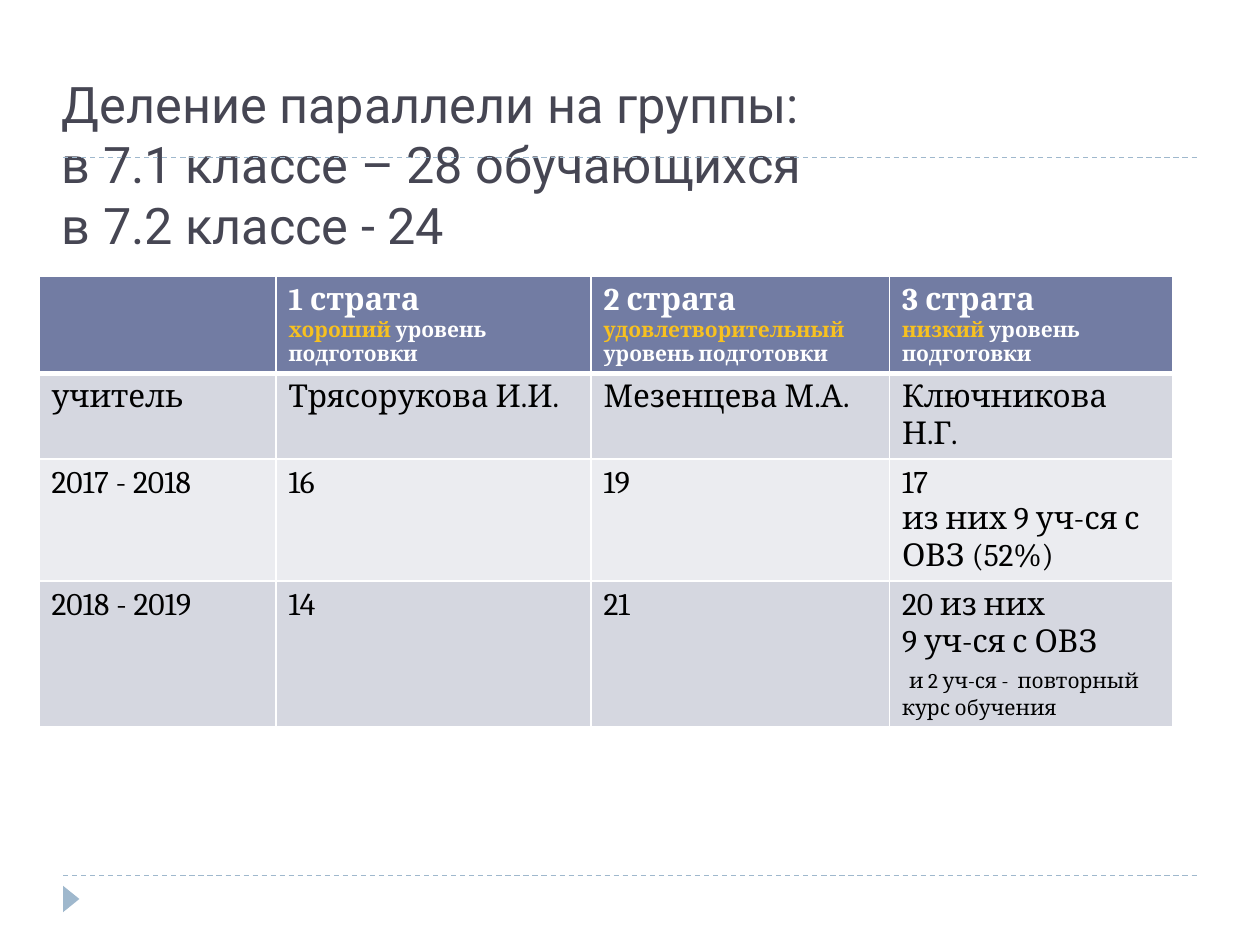
from lxml.etree import SubElement
from pptx import Presentation
from pptx.dml.color import RGBColor
from pptx.enum.dml import MSO_LINE
from pptx.enum.shapes import MSO_CONNECTOR, MSO_SHAPE
from pptx.enum.text import MSO_ANCHOR, PP_ALIGN
from pptx.oxml.ns import qn
from pptx.util import Inches, Pt

WIDTH, HEIGHT = 10, 7.5
COLOURS = {
    "title": "464653", "accent": "9FB8CD", "header": "727CA3",
    "dark band": "D5D7E0", "light band": "EBECF0",
    "white": "FFFFFF", "black": "000000", "yellow": "F7C120",
}
TITLE = "Деление параллели на группы:\nв 7.1 классе – 28 обучающихся\nв 7.2 классе - 24"
LEVELS = ["хороший ", "удовлетворительный ", "низкий "]
# A cell is a list of paragraphs, a paragraph a list of (text, size, colour).
BODY = [
    [["учитель"], ["Трясорукова И.И."], ["Мезенцева М.А."], ["Ключникова Н.Г."]],
    [["2017 - 2018"], ["16"], ["19"], ["17", "из них 9 уч-ся с ОВЗ (52%)"]],
    [["2018 - 2019"], ["14"], ["21"], ["20 из них", "9 уч-ся с ОВЗ"]],
]
REPEATERS = [(" ", 18, "black"), ("и 2 уч-ся -  повторный курс обучения", 12, "black")]


def colour(name):
    return RGBColor.from_string(COLOURS[name])


def header_cells():
    cells = [[]]
    for number, level in enumerate(LEVELS, 1):
        cells.append([
            [(f"{number} страта", 18, "white")],
            [(level, 12, "yellow"), ("уровень подготовки", 12, "white")],
        ])
    return cells


def body_cells():
    rows = [[[[(line, 18, "black")] for line in cell] for cell in row] for row in BODY]
    rows[-1][-1].append(REPEATERS)
    return rows


class SlideBuilder:
    """Holds the fonts and the current slide; places are shares of the slide."""

    title_font, table_font = "Roboto", "Cambria"

    def __init__(self, deck):
        self.deck = deck
        self.page = deck.slides.add_slide(deck.slide_layouts[5])

    def across(self, share):
        return int(self.deck.slide_width * share)

    def down(self, share):
        return int(self.deck.slide_height * share)

    def frame(self, left, top, width, height):
        return self.across(left), self.down(top), self.across(width), self.down(height)

    def format_run(self, span, font, size, ink, bold=False):
        span.font.name, span.font.size, span.font.bold = font, Pt(size), bold
        span.font.color.rgb = colour(ink)

    def title(self, text, *place):
        box = self.page.shapes.title
        box.left, box.top, box.width, box.height = self.frame(*place)
        box.text_frame.vertical_anchor = MSO_ANCHOR.BOTTOM
        para = box.text_frame.paragraphs[0]
        para.text, para.alignment = text, PP_ALIGN.LEFT
        for span in para.runs:
            self.format_run(span, self.title_font, 28.8, "title")

    def dashed_rule(self, left, right, top):
        rule = self.page.shapes.add_connector(
            MSO_CONNECTOR.STRAIGHT, self.across(left), self.down(top),
            self.across(right), self.down(top))
        rule.line.color.rgb = colour("accent")
        rule.line.width, rule.line.dash_style = Pt(0.75), MSO_LINE.DASH
        SubElement(rule._element.spPr, qn("a:effectLst"))

    def pointer(self, *place):
        shape = self.page.shapes.add_shape(MSO_SHAPE.ISOSCELES_TRIANGLE, *self.frame(*place))
        shape.rotation = 90
        shape.shadow.inherit = False
        shape.fill.solid()
        shape.fill.fore_color.rgb = colour("accent")
        shape.line.fill.background()

    def borders(self, cell, bottom):
        properties = cell._tc.get_or_add_tcPr()
        for side, width in (("L", 1), ("R", 1), ("T", 1), ("B", bottom)):
            edge = SubElement(properties, qn(f"a:ln{side}"), w=str(Pt(width)))
            fill = SubElement(edge, qn("a:solidFill"))
            SubElement(fill, qn("a:srgbClr"), val=COLOURS["white"])

    def cell(self, cell, paragraphs, band, header):
        self.borders(cell, 3 if header else 1)
        cell.fill.solid()
        cell.fill.fore_color.rgb = colour(band)
        for index, spans in enumerate(paragraphs):
            frame = cell.text_frame
            para = frame.add_paragraph() if index else frame.paragraphs[0]
            for text, size, ink in spans:
                span = para.add_run()
                span.text = text
                self.format_run(span, self.table_font, size, ink, header)

    def table(self, rows, left, top, widths, heights):
        place = self.frame(left, top, sum(widths), sum(heights))
        table = self.page.shapes.add_table(len(rows), len(widths), *place).table
        for column, width in zip(table.columns, widths):
            column.width = self.across(width)
        for row, height in zip(table.rows, heights):
            row.height = self.down(height)
        for r, row in enumerate(rows):
            band = ("dark band" if r % 2 else "light band") if r else "header"
            for c, paragraphs in enumerate(row):
                self.cell(table.cell(r, c), paragraphs, band, header=r == 0)


def main():
    deck = Presentation()
    deck.slide_width, deck.slide_height = Inches(WIDTH), Inches(HEIGHT)
    slide = SlideBuilder(deck)
    for top in (6.95, 1.25):
        slide.dashed_rule(0.05, 0.95, top / HEIGHT)
    slide.pointer(0.46 / WIDTH, 7.07 / HEIGHT, 0.21 / WIDTH, 0.13 / HEIGHT)
    slide.title(TITLE, 0.39 / WIDTH, 0.57 / HEIGHT, 0.9, 0.2)
    slide.table(
        [header_cells()] + body_cells(), 0.31 / WIDTH, 2.19 / HEIGHT,
        widths=[width / WIDTH for width in (1.88, 2.5, 2.37, 2.25)],
        heights=[height / HEIGHT for height in (0.77, 0.68, 0.97, 1.15)])
    deck.save("out.pptx")


if __name__ == "__main__":
    main()
